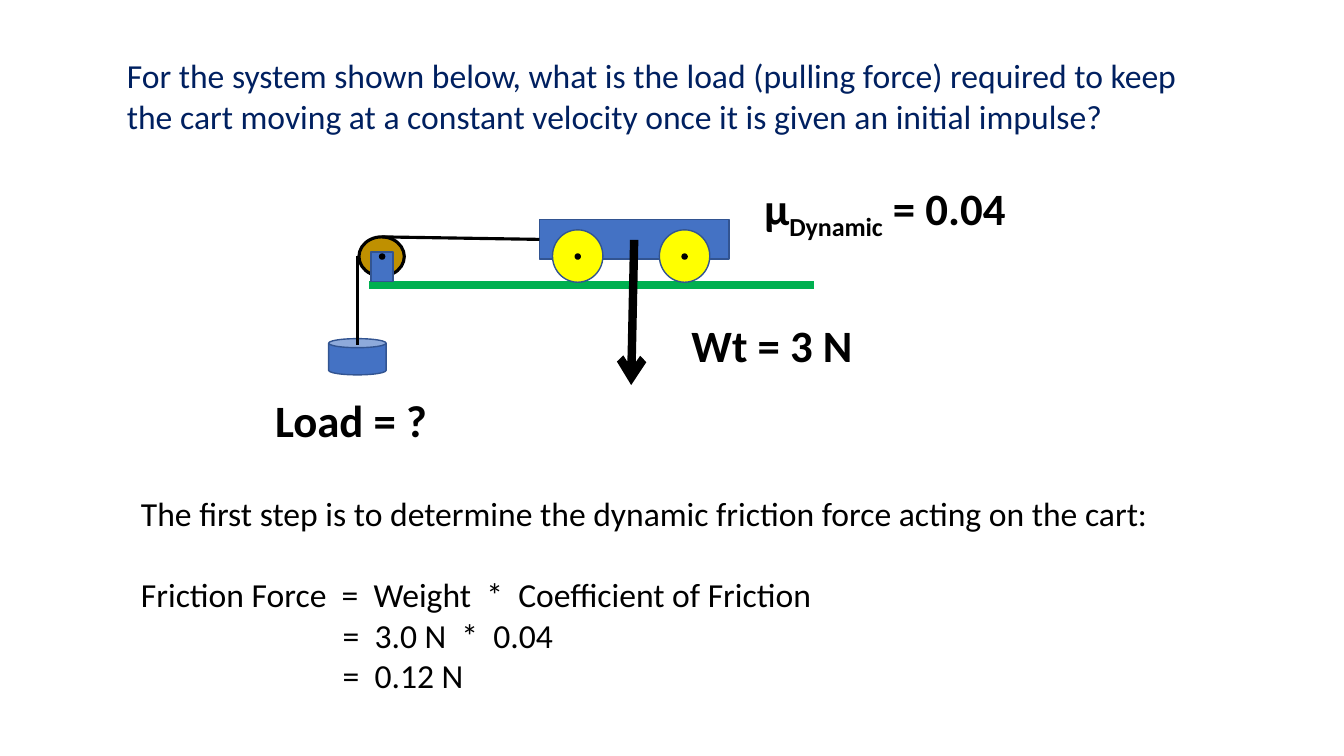
from lxml import etree
from pptx import Presentation
from pptx.dml.color import RGBColor
from pptx.enum.shapes import MSO_CONNECTOR, MSO_SHAPE
from pptx.enum.text import MSO_AUTO_SIZE
from pptx.oxml.ns import qn
from pptx.util import Inches, Pt

CAN = MSO_SHAPE.CAN
OVAL = MSO_SHAPE.OVAL
RECT = MSO_SHAPE.RECTANGLE
STRAIGHT = MSO_CONNECTOR.STRAIGHT
FIT = MSO_AUTO_SIZE.SHAPE_TO_FIT_TEXT
TOP, LEFT = 0, 1

COLORS = {
    "navy": "002060",
    "blue": "4472C4",
    "edge": "325491",
    "green": "00B050",
    "yellow": "FFFF00",
    "bronze": "BF9000",
    "black": "000000",
}
BODY = {"name": "Calibri", "size": Pt(24)}
LABEL = {"name": "Calibri", "size": Pt(32), "bold": True}
DOT = 0.05


def rgb(name):
    return RGBColor.from_string(COLORS[name])


def add_part(shapes, kind, box, fill, edge="edge", width=1):
    sp = shapes.add_shape(kind, *map(Inches, box))
    sp.shadow.inherit = False
    sp.fill.solid()
    sp.fill.fore_color.rgb = rgb(fill)
    sp.line.color.rgb = rgb(edge)
    sp.line.width = Pt(width)
    return sp


def add_axle(shapes, x):
    add_part(shapes, OVAL, (x - DOT / 2, 2.52, DOT, DOT), "black", "black")


def add_wheel(shapes, x):
    add_part(shapes, OVAL, (x - 0.25, 2.28, 0.5, 0.52), "yellow")
    add_axle(shapes, x)


def add_line(shapes, start, end, color, width, arrow=False):
    line = shapes.add_connector(STRAIGHT, *map(Inches, start + end))
    line.line.color.rgb = rgb(color)
    line.line.width = Pt(width)
    spPr = line._element.spPr
    if arrow:
        etree.SubElement(spPr.find(qn("a:ln")), qn("a:tailEnd"), type="arrow")
    etree.SubElement(spPr, qn("a:effectLst"))
    return line


def add_run(p, text, font, color):
    r = p.add_run()
    r.text = text
    for name, value in font.items():
        setattr(r.font, name, value)
    r.font.color.rgb = rgb(color)
    return r


def add_text(shapes, box, lines, font, color="black", wrap=True):
    tf = shapes.add_textbox(*map(Inches, box)).text_frame
    tf.word_wrap = wrap
    tf.auto_size = FIT
    for i, line in enumerate(lines):
        p = tf.add_paragraph() if i else tf.paragraphs[0]
        add_run(p, line, font, color)
    return tf


def add_cart_system(shapes):
    add_part(shapes, CAN, (3.26, 3.36, 0.57, 0.36), "blue")
    add_line(shapes, (3.66, 2.83), (8.07, 2.83), "green", 6)
    cart = add_part(shapes, RECT, (5.35, 2.18, 1.88, 0.39), "blue")
    for x in (5.73, 6.79):
        add_wheel(shapes, x)
    add_line(shapes, (6.29, 2.38), (6.26, 3.82), "black", 6, arrow=True)

    pulley = add_part(shapes, OVAL, (3.56, 2.35, 0.45, 0.39), "bronze", "black", 2.25)
    add_part(shapes, RECT, (3.68, 2.5, 0.22, 0.29), "blue")
    add_axle(shapes, 3.79)
    rope = add_line(shapes, (3.79, 2.35), (5.35, 2.38), "black", 2.25)
    rope.begin_connect(pulley, TOP)
    rope.end_connect(cart, LEFT)
    add_line(shapes, (3.55, 2.54), (3.55, 3.42), "black", 2.25)

    add_text(shapes, (6.76, 3.1, 1.86, 0.64), ["Wt = 3 N"], LABEL)
    add_text(shapes, (2.63, 3.85, 1.86, 0.64), ["Load = ?"], LABEL)
    tf = add_text(shapes, (7.48, 1.74, 2.77, 0.64), ["μ"], LABEL, wrap=False)
    p = tf.paragraphs[0]
    r = add_run(p, "Dynamic", LABEL, "black")
    r._r.get_or_add_rPr().set("baseline", "-25000")
    add_run(p, " = 0.04", LABEL, "black")


def add_solution(shapes):
    lines = [
        "The first step is to determine the dynamic friction force acting on the cart:",
        "Friction Force  =  Weight  *  Coefficient of Friction",
        "=  3.0 N  *  0.04",
        "=  0.12 N",
    ]
    tf = add_text(shapes, (1.3, 4.84, 10.74, 2.12), lines, BODY)
    tf.paragraphs[1].space_before = Pt(29.3)
    for p in tf.paragraphs[2:]:
        p._p.get_or_add_pPr().set("marL", str(Inches(2)))


def main():
    prs = Presentation()
    prs.slide_width = Inches(13.33)
    prs.slide_height = Inches(7.5)
    s = prs.slides.add_slide(prs.slide_layouts[6])
    question = (
        "For the system shown below, what is the load (pulling force) required to keep "
        "the cart moving at a constant velocity once it is given an initial impulse?"
    )
    add_text(s.shapes, (1.16, 0.5, 11.01, 0.91), [question], BODY, "navy")
    add_cart_system(s.shapes.add_group_shape().shapes)
    add_solution(s.shapes)
    prs.save("out.pptx")


if __name__ == "__main__":
    main()
